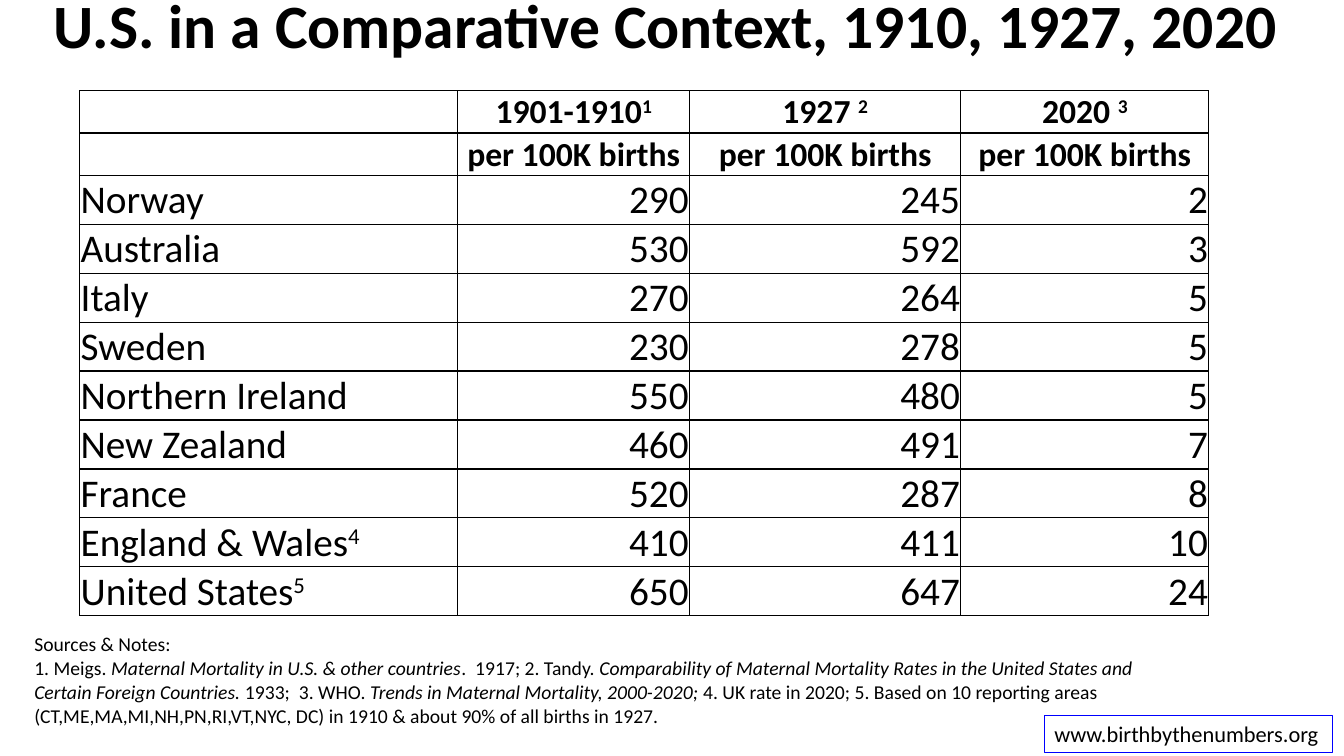
from dataclasses import dataclass

from lxml.etree import SubElement
from pptx import Presentation
from pptx.dml.color import RGBColor
from pptx.enum.shapes import MSO_SHAPE
from pptx.enum.text import MSO_ANCHOR, MSO_AUTO_SIZE, PP_ALIGN
from pptx.oxml.ns import qn
from pptx.util import Inches, Pt

COLORS = {"ink": "000000", "paper": "FFFFFF", "link": "0000FF"}
FONT = "Calibri"


@dataclass
class Grid:
    left: float
    top: float
    widths: list[float]
    heights: list[float]
    border: str


@dataclass
class Entry:
    text: str
    size: int
    bold: bool = False
    align: PP_ALIGN = PP_ALIGN.LEFT


@dataclass
class Nation:
    name: str
    rates: tuple[int, int, int]


HEADS = ["", "1901-1910^1^", "1927 ^2^", "2020 ^3^"]
UNITS = ["", *["per 100K births"] * 3]
NATIONS = [
    Nation("Norway", (290, 245, 2)),
    Nation("Australia", (530, 592, 3)),
    Nation("Italy", (270, 264, 5)),
    Nation("Sweden", (230, 278, 5)),
    Nation("Northern Ireland", (550, 480, 5)),
    Nation("New Zealand", (460, 491, 7)),
    Nation("France", (520, 287, 8)),
    Nation("England & Wales^4^", (410, 411, 10)),
    Nation("United States^5^", (650, 647, 24)),
]
NOTES = (
    "Sources & Notes:\n"
    "1. Meigs. _Maternal Mortality in U.S. & other countries_.  1917; 2. Tandy. "
    "_Comparability of Maternal Mortality Rates in the United States and "
    "Certain Foreign Countries. _1933;  3. WHO. "
    "_Trends in Maternal Mortality, 2000-2020; _4. UK rate in 2020; "
    "5. Based on 10 reporting areas (CT,ME,MA,MI,NH,PN,RI,VT,NYC, DC) "
    "in 1910 & about 90% of all births in 1927."
)


def color(name: str) -> RGBColor:
    return RGBColor.from_string(COLORS[name])


def write(frame, text: str, *, size: int, bold: bool = False,
          align: PP_ALIGN = PP_ALIGN.LEFT, spacing: float = 1.0) -> None:
    """Underscores enclose italics; carets enclose superscripts."""
    for row, line in enumerate(text.split("\n")):
        para = frame.add_paragraph() if row else frame.paragraphs[0]
        para.alignment = align
        para.line_spacing = spacing
        para.font.size = Pt(size)
        for slant, part in enumerate(line.split("_")):
            for lift, piece in enumerate(part.split("^")):
                if not piece:
                    continue
                run = para.add_run()
                run.text = piece
                font = run.font
                font.name, font.size = FONT, Pt(size)
                font.bold, font.italic = bold, slant % 2 == 1
                font.color.rgb = color("ink")
                if lift % 2:
                    run._r.get_or_add_rPr().set("baseline", "30000")


def outline(cell, name: str) -> None:
    props = cell._tc.get_or_add_tcPr()
    for side in ("a:lnL", "a:lnR", "a:lnT", "a:lnB"):
        line = SubElement(props, qn(side), w=str(Pt(1)))
        fill = SubElement(line, qn("a:solidFill"))
        SubElement(fill, qn("a:srgbClr"), val=COLORS[name])


def draw(slide, grid: Grid, rows: list[list[Entry]]) -> None:
    table = slide.shapes.add_table(
        len(rows), len(grid.widths), Inches(grid.left), Inches(grid.top),
        Inches(sum(grid.widths)), Inches(sum(grid.heights))).table
    table.first_row = table.horz_banding = False
    for column, width in zip(table.columns, grid.widths):
        column.width = Inches(width)
    for band, height, entries in zip(table.rows, grid.heights, rows):
        band.height = Inches(height)
        for cell, entry in zip(band.cells, entries):
            cell.margin_left = cell.margin_right = cell.margin_top = Inches(0.01)
            cell.margin_bottom = 0
            cell.vertical_anchor = MSO_ANCHOR.BOTTOM
            outline(cell, grid.border)
            cell.fill.solid()
            cell.fill.fore_color.rgb = color("paper")
            write(cell.text_frame, entry.text, size=entry.size,
                  bold=entry.bold, align=entry.align)


def head(slide, text: str) -> None:
    title = slide.shapes.title
    title.left, title.top = Inches(0.33), Inches(-0.15)
    title.width, title.height = Inches(12.55), Inches(0.86)
    frame = title.text_frame
    frame.auto_size = MSO_AUTO_SIZE.NONE
    frame.vertical_anchor = MSO_ANCHOR.MIDDLE
    write(frame, text, size=44, bold=True, align=PP_ALIGN.CENTER, spacing=0.9)


def badge(slide, text: str) -> None:
    box = slide.shapes.add_shape(MSO_SHAPE.RECTANGLE, Inches(10.36), Inches(7.1),
                                 Inches(2.86), Inches(0.37))
    box.shadow.inherit = False
    box.fill.solid()
    box.fill.fore_color.rgb = color("paper")
    box.line.color.rgb = color("link")
    box.line.width = Pt(0.75)
    frame = box.text_frame
    frame.word_wrap = False
    frame.auto_size = MSO_AUTO_SIZE.SHAPE_TO_FIT_TEXT
    frame.vertical_anchor = MSO_ANCHOR.TOP
    write(frame, text, size=16)


def main() -> None:
    deck = Presentation()
    deck.slide_width, deck.slide_height = Inches(13.33), Inches(7.5)
    slide = deck.slides.add_slide(deck.slide_layouts[5])
    head(slide, "U.S. in a Comparative Context, 1910, 1927, 2020")

    rows = [[Entry(text, 24, True, PP_ALIGN.CENTER) for text in line]
            for line in (HEADS, UNITS)]
    rows += [[Entry(nation.name, 28),
              *[Entry(str(rate), 28, align=PP_ALIGN.RIGHT) for rate in nation.rates]]
             for nation in NATIONS]
    heights = [0.42] * 2 + [0.48] * len(NATIONS)
    draw(slide, Grid(0.79, 0.9, [3.75, 2.3, 2.69, 2.46], heights, "ink"), rows)
    draw(slide, Grid(0.33, 6.27, [11.13], [0.94], "paper"), [[Entry(NOTES, 14)]])
    badge(slide, "www.birthbythenumbers.org")
    deck.save("out.pptx")


if __name__ == "__main__":
    main()
